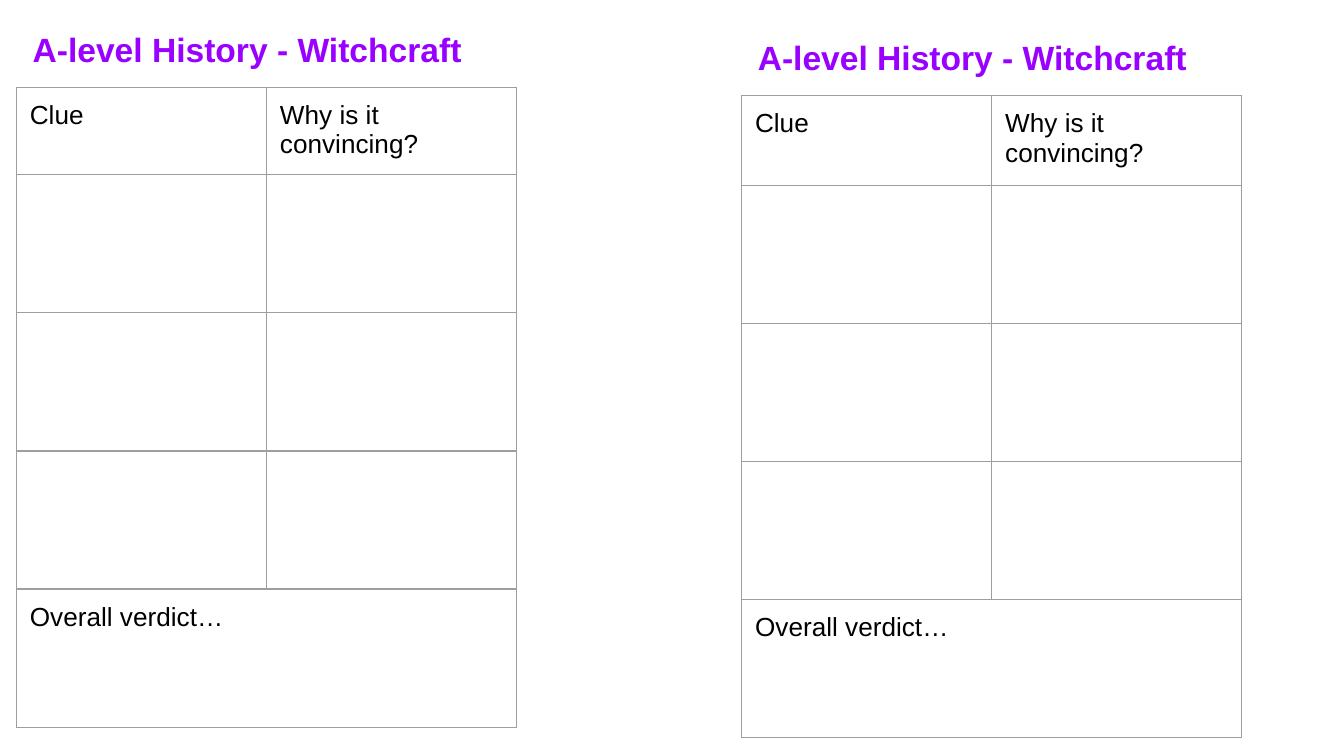
from lxml import etree
from pptx import Presentation
from pptx.dml.color import RGBColor
from pptx.enum.text import MSO_ANCHOR
from pptx.oxml.ns import qn
from pptx.util import Pt

MIDDLE = MSO_ANCHOR.MIDDLE
PURPLE = RGBColor(0x99, 0x00, 0xFF)
BLACK = RGBColor(0x00, 0x00, 0x00)
GREY = RGBColor(0x9E, 0x9E, 0x9E)
FONT = "Arial"
INSET = Pt(7.2)
COLUMN_WIDTH = Pt(134)
HEADER_HEIGHT = Pt(46.8)
ROW_HEIGHT = Pt(74)
CLUE_ROWS = 3
SHEET_ORIGINS = [(Pt(8.8), Pt(46.8)), (Pt(397.3), Pt(51.2))]


def style_font(font, size, color, bold=False):
    """Set the typeface, size, colour and weight of a font."""
    font.name = FONT
    font.size = size
    font.bold = bold
    font.color.rgb = color


def set_insets(target):
    """Give a text frame or a cell equal margins on all sides."""
    target.margin_left = target.margin_right = INSET
    target.margin_top = target.margin_bottom = INSET


def add_borders(cell):
    """Draw a thin grey line on every side of a cell."""
    properties = cell._tc.get_or_add_tcPr()
    for index, side in enumerate(("a:lnL", "a:lnR", "a:lnT", "a:lnB")):
        line = etree.Element(qn(side), w=str(Pt(0.75)))
        fill = etree.SubElement(line, qn("a:solidFill"))
        etree.SubElement(fill, qn("a:srgbClr"), val=str(GREY))
        properties.insert(index, line)


def add_title(page, left, top):
    """Add the worksheet title above its table."""
    box = page.shapes.add_textbox(left, top, Pt(265), Pt(41))
    frame = box.text_frame
    frame.word_wrap = True
    frame.vertical_anchor = MIDDLE
    set_insets(frame)
    frame.text = "A-level History - Witchcraft"
    style_font(frame.paragraphs[0].runs[0].font, Pt(18), PURPLE, True)


def add_clue_table(page, left, top):
    """Add the table of clues with a verdict row at the bottom."""
    rows = [["Clue", "Why is it convincing?"]]
    rows += [["", ""] for _ in range(CLUE_ROWS)]
    rows.append(["Overall verdict…", ""])
    heights = [HEADER_HEIGHT] + [ROW_HEIGHT] * (len(rows) - 1)
    frame = page.shapes.add_table(
        len(rows), 2, left, top, 2 * COLUMN_WIDTH, sum(heights)
    )
    table = frame.table
    table.first_row = False
    table.horz_banding = False
    for column in table.columns:
        column.width = COLUMN_WIDTH
    for row, height, texts in zip(table.rows, heights, rows):
        row.height = height
        for cell, text in zip(row.cells, texts):
            cell.text = text
            set_insets(cell)
            style_font(cell.text_frame.paragraphs[0].font, Pt(14), BLACK)
            for span in cell.text_frame.paragraphs[0].runs:
                style_font(span.font, Pt(14), BLACK)
            cell.fill.background()
            add_borders(cell)
    last = len(rows) - 1
    table.cell(last, 0).merge(table.cell(last, 1))


def main():
    """Build the page with two matching worksheets."""
    deck = Presentation()
    deck.slide_width = Pt(720)
    deck.slide_height = Pt(405)
    page = deck.slides.add_slide(deck.slide_layouts[6])
    for left, top in SHEET_ORIGINS:
        add_clue_table(page, left, top)
        add_title(page, left + Pt(1.6), top - Pt(41))
    deck.save("out.pptx")


if __name__ == "__main__":
    main()
